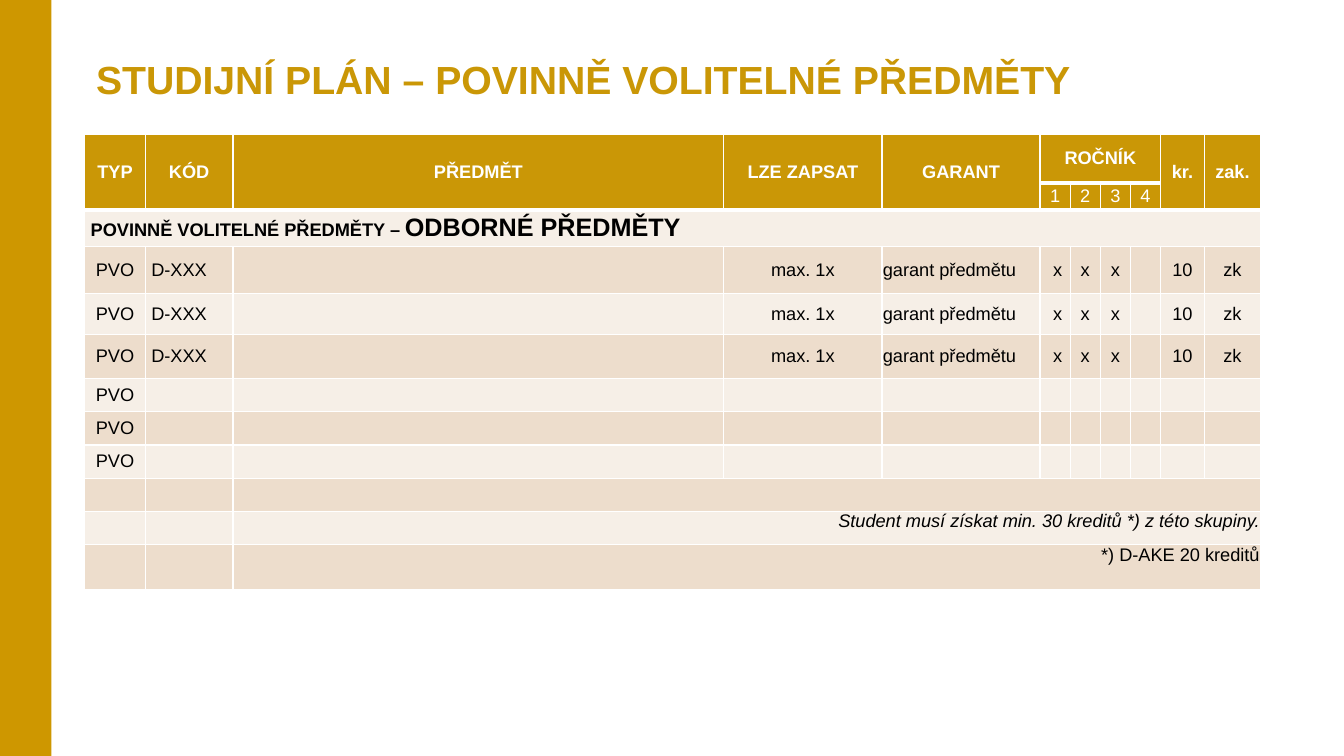
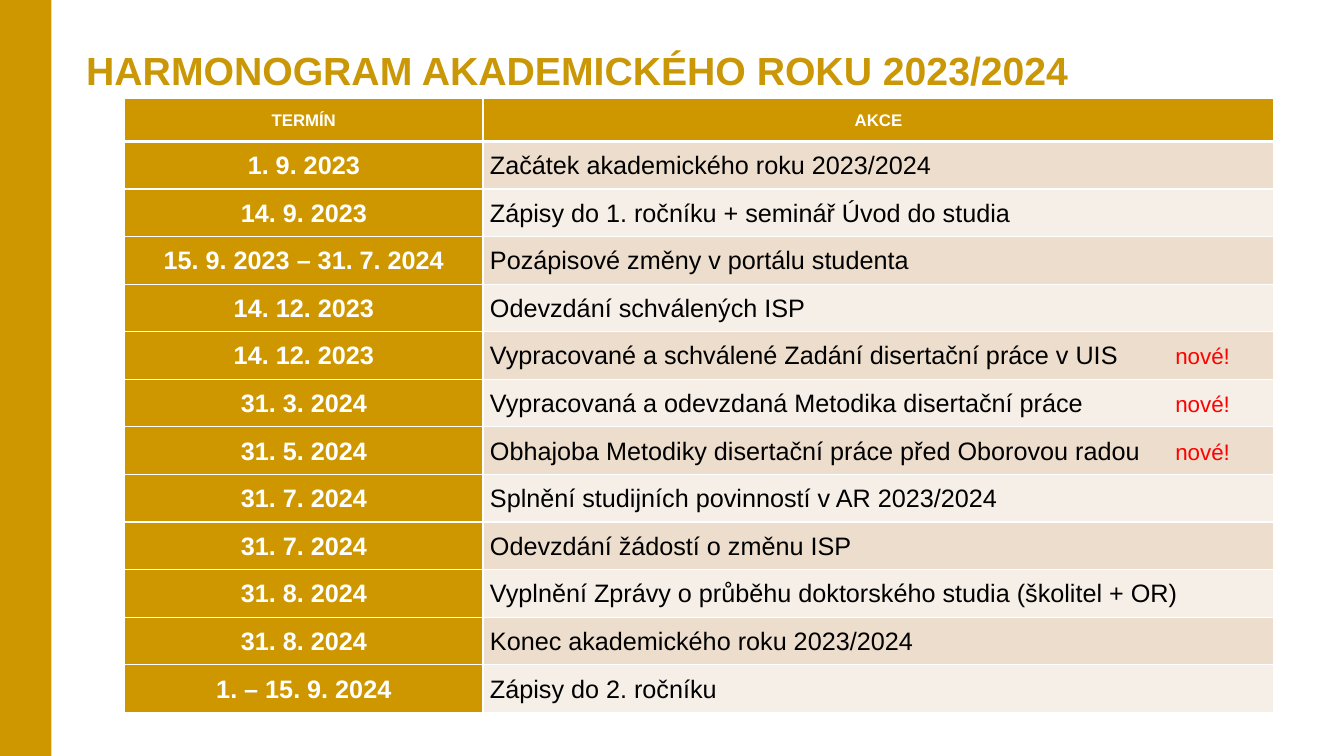
"""Build two slides of a doctoral study plan: elective subjects and the academic calendar."""
from lxml.etree import SubElement
from pptx import Presentation
from pptx.dml.color import RGBColor
from pptx.enum.shapes import MSO_SHAPE
from pptx.enum.text import MSO_ANCHOR, PP_ALIGN
from pptx.oxml.ns import qn
from pptx.util import Pt

COLORS = {
    "band": "CE9700", "gold": "CA9706", "dark": "EDDDCC", "light": "F6EFE7",
    "white": "FFFFFF", "black": "000000", "red": "FF0000",
}
FONT = "Arial"
LEFT, CENTER, RIGHT = PP_ALIGN.LEFT, PP_ALIGN.CENTER, PP_ALIGN.RIGHT
SLIDE_W, SLIDE_H, BAND_W = 960, 540, 36.7

PLAN_TITLE = "STUDIJNÍ PLÁN – POVINNĚ VOLITELNÉ PŘEDMĚTY"
PLAN_HEADS = {0: "TYP", 1: "KÓD", 2: "PŘEDMĚT", 3: "LZE ZAPSAT", 4: "GARANT",
              5: "ROČNÍK", 9: "kr.", 10: "zak."}
YEARS = ("1", "2", "3", "4")
YEAR_COL = 5
SECTION = ("POVINNĚ VOLITELNÉ PŘEDMĚTY – ", "ODBORNÉ PŘEDMĚTY")
SUBJECT = ("PVO", "D-XXX", "", "max. 1x", "garant předmětu", "x", "x", "x", "", "10", "zk")
SUBJECTS = [SUBJECT] * 3 + [("PVO",)] * 3
NOTES = [("", False), ("Student musí získat min. 30 kreditů *) z této skupiny.", True),
         ("*) D-AKE 20 kreditů", False)]
PLAN_WIDTHS = [43.3, 62.6, 350.6, 113, 113] + [21.5] * 4 + [31.5, 39.9]
PLAN_HEIGHTS = [34.5, 19.3, 26.4, 33.4, 29.3, 31.4] + [23.8] * 5 + [32.2]
LEFT_COLS = (1, 4)
INDENTED_COLS = (1, 5)

CALENDAR_TITLE = "HARMONOGRAM AKADEMICKÉHO ROKU 2023/2024"
CALENDAR_HEADS = ("TERMÍN", "AKCE")
NEW = "nové!"
EVENTS = [
    ("1. 9. 2023", "Začátek akademického roku 2023/2024", False),
    ("14. 9. 2023", "Zápisy do 1. ročníku + seminář Úvod do studia", False),
    ("15. 9. 2023 – 31. 7. 2024", "Pozápisové změny v portálu studenta", False),
    ("14. 12. 2023", "Odevzdání schválených ISP", False),
    ("14. 12. 2023", "Vypracované a schválené Zadání disertační práce v UIS", True),
    ("31. 3. 2024", "Vypracovaná a odevzdaná Metodika disertační práce", True),
    ("31. 5. 2024", "Obhajoba Metodiky disertační práce před Oborovou radou", True),
    ("31. 7. 2024", "Splnění studijních povinností v AR 2023/2024", False),
    ("31. 7. 2024", "Odevzdání žádostí o změnu ISP", False),
    ("31. 8. 2024", "Vyplnění Zprávy o průběhu doktorského studia (školitel + OR)", False),
    ("31. 8. 2024", "Konec akademického roku 2023/2024", False),
    ("1. – 15. 9. 2024", "Zápisy do 2. ročníku", False),
]
CALENDAR_WIDTHS = [256, 565]
CALENDAR_HEIGHTS = [30.5] + [34] * len(EVENTS)
NEW_TAB = 489.5


def rgb(name):
    """Return a palette colour."""
    return RGBColor.from_string(COLORS[name])


def set_font(font, size, color, bold=False, italic=False):
    """Apply the shared typeface with a size, colour and weight."""
    font.name, font.size, font.bold, font.italic = FONT, Pt(size), bold, italic
    font.color.rgb = rgb(color)


def add_base_slide(prs, title, left, top):
    """Add a slide with the side band and its title."""
    s = prs.slides.add_slide(prs.slide_layouts[6])
    sp = s.shapes.add_shape(MSO_SHAPE.RECTANGLE, 0, 0, Pt(BAND_W), Pt(SLIDE_H))
    sp.shadow.inherit = False
    sp.fill.solid()
    sp.fill.fore_color.rgb = rgb("band")
    sp.line.fill.background()
    tf = s.shapes.add_textbox(Pt(left), Pt(top), Pt(SLIDE_W - left), Pt(41)).text_frame
    tf.word_wrap = True
    p = tf.paragraphs[0]
    p.text = title
    set_font(p.font, 28, "gold", True)
    return s


def set_borders(cell, top, bottom):
    """Draw white borders around a cell."""
    tc_pr = cell._tc.get_or_add_tcPr()
    for tag, width in (("lnL", 1), ("lnR", 1), ("lnT", top), ("lnB", bottom)):
        ln = SubElement(tc_pr, qn("a:" + tag), w=str(Pt(width)))
        fill = SubElement(ln, qn("a:solidFill"))
        SubElement(fill, qn("a:srgbClr"), val=COLORS["white"])


def add_grid(s, left, top, widths, heights, head_rows, head_color, size, inset):
    """Add a table with a coloured head and alternating body rows."""
    frame = s.shapes.add_table(len(heights), len(widths), Pt(left), Pt(top),
                               Pt(sum(widths)), Pt(sum(heights)))
    table = frame.table
    table.first_row = table.horz_banding = False
    for col, width in zip(table.columns, widths):
        col.width = Pt(width)
    for i, (row, height) in enumerate(zip(table.rows, heights)):
        row.height = Pt(height)
        body = "dark" if (i - head_rows) % 2 == 0 else "light"
        for cell in row.cells:
            set_borders(cell, 3 if 0 < i <= head_rows else 1, 3 if i < head_rows else 1)
            cell.fill.solid()
            cell.fill.fore_color.rgb = rgb(head_color if i < head_rows else body)
            cell.margin_left = cell.margin_right = Pt(inset)
            cell.margin_top = cell.margin_bottom = 0
            cell.vertical_anchor = MSO_ANCHOR.MIDDLE
            set_font(cell.text_frame.paragraphs[0].font, size, "black")
    return table


def write(cell, text, size, color="black", bold=False, italic=False, align=CENTER):
    """Fill a cell with one paragraph and return it."""
    p = cell.text_frame.paragraphs[0]
    p.text = text
    p.alignment = align
    set_font(p.font, size, color, bold, italic)
    return p


def build_plan(prs):
    """Build the slide with elective subjects."""
    s = add_base_slide(prs, PLAN_TITLE, 61.5, 36)
    table = add_grid(s, 60.5, 96, PLAN_WIDTHS, PLAN_HEIGHTS, 2, "gold", 13, 0.7)
    last = len(PLAN_WIDTHS) - 1
    for col, head in PLAN_HEADS.items():
        end = (0, col + len(YEARS) - 1) if col == YEAR_COL else (1, col)
        table.cell(0, col).merge(table.cell(*end))
        write(table.cell(0, col), head, 13, "white", True)
    for col, year in enumerate(YEARS, YEAR_COL):
        write(table.cell(1, col), year, 13, "white")

    section = table.cell(2, 0)
    section.merge(table.cell(2, last))
    section.margin_left = Pt(4.3)
    for cell in table.rows[2].cells:
        cell.fill.fore_color.rgb = rgb("light")
    p = section.text_frame.paragraphs[0]
    for text, size in zip(SECTION, (13, 18)):
        r = p.add_run()
        r.text = text
        set_font(r.font, size, "black", True)

    first_note = 3 + len(SUBJECTS)
    for i in range(3, len(PLAN_HEIGHTS)):
        for cell in table.rows[i].cells:
            cell.fill.fore_color.rgb = rgb("dark" if i % 2 else "light")
    for i, subject in enumerate(SUBJECTS, 3):
        for col, text in enumerate(subject):
            cell = table.cell(i, col)
            if col in INDENTED_COLS:
                cell.margin_left = Pt(4.3)
            if text:
                write(cell, text, 13, align=LEFT if col in LEFT_COLS else CENTER)
    for i, (text, italic) in enumerate(NOTES, first_note):
        cell = table.cell(i, 2)
        cell.merge(table.cell(i, last))
        cell.vertical_anchor = MSO_ANCHOR.TOP
        if text:
            write(cell, text, 13, italic=italic, align=RIGHT)


def add_new_mark(p):
    """Append the red mark at a fixed tab stop."""
    tabs = SubElement(p._p.get_or_add_pPr(), qn("a:tabLst"))
    SubElement(tabs, qn("a:tab"), pos=str(Pt(NEW_TAB)), algn="l")
    p._p.pPr.find(qn("a:defRPr")).addprevious(tabs)
    r = p.add_run()
    r.text = "\t" + NEW
    set_font(r.font, 16, "red")


def build_calendar(prs):
    """Build the slide with the academic calendar."""
    s = add_base_slide(prs, CALENDAR_TITLE, 54.5, 29.5)
    table = add_grid(s, 89, 70.5, CALENDAR_WIDTHS, CALENDAR_HEIGHTS, 1, "band", 18, 5)
    paragraphs = [write(table.cell(0, col), head, 12, "white", True)
                  for col, head in enumerate(CALENDAR_HEADS)]
    for i, (date, event, is_new) in enumerate(EVENTS, 1):
        date_cell = table.cell(i, 0)
        date_cell.fill.fore_color.rgb = rgb("band")
        paragraphs.append(write(date_cell, date, 18, "white", True))
        p = write(table.cell(i, 1), event, 18, align=LEFT)
        if is_new:
            add_new_mark(p)
        paragraphs.append(p)
    for p in paragraphs:
        p.line_spacing = 1.05
        p.space_after = Pt(8)


def main():
    """Create and save the presentation."""
    prs = Presentation()
    prs.slide_width, prs.slide_height = Pt(SLIDE_W), Pt(SLIDE_H)
    build_plan(prs)
    build_calendar(prs)
    prs.save("out.pptx")


if __name__ == "__main__":
    main()
